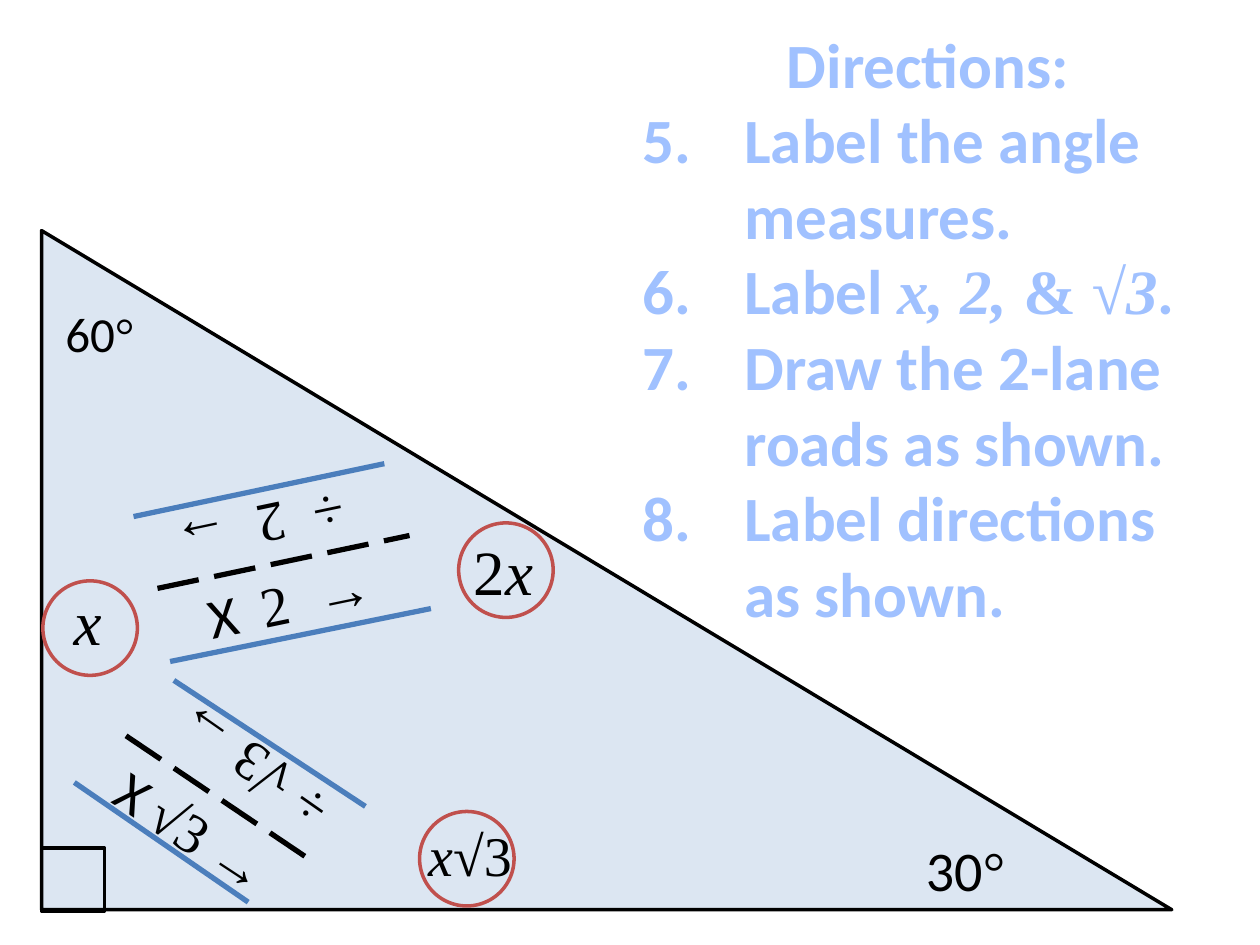
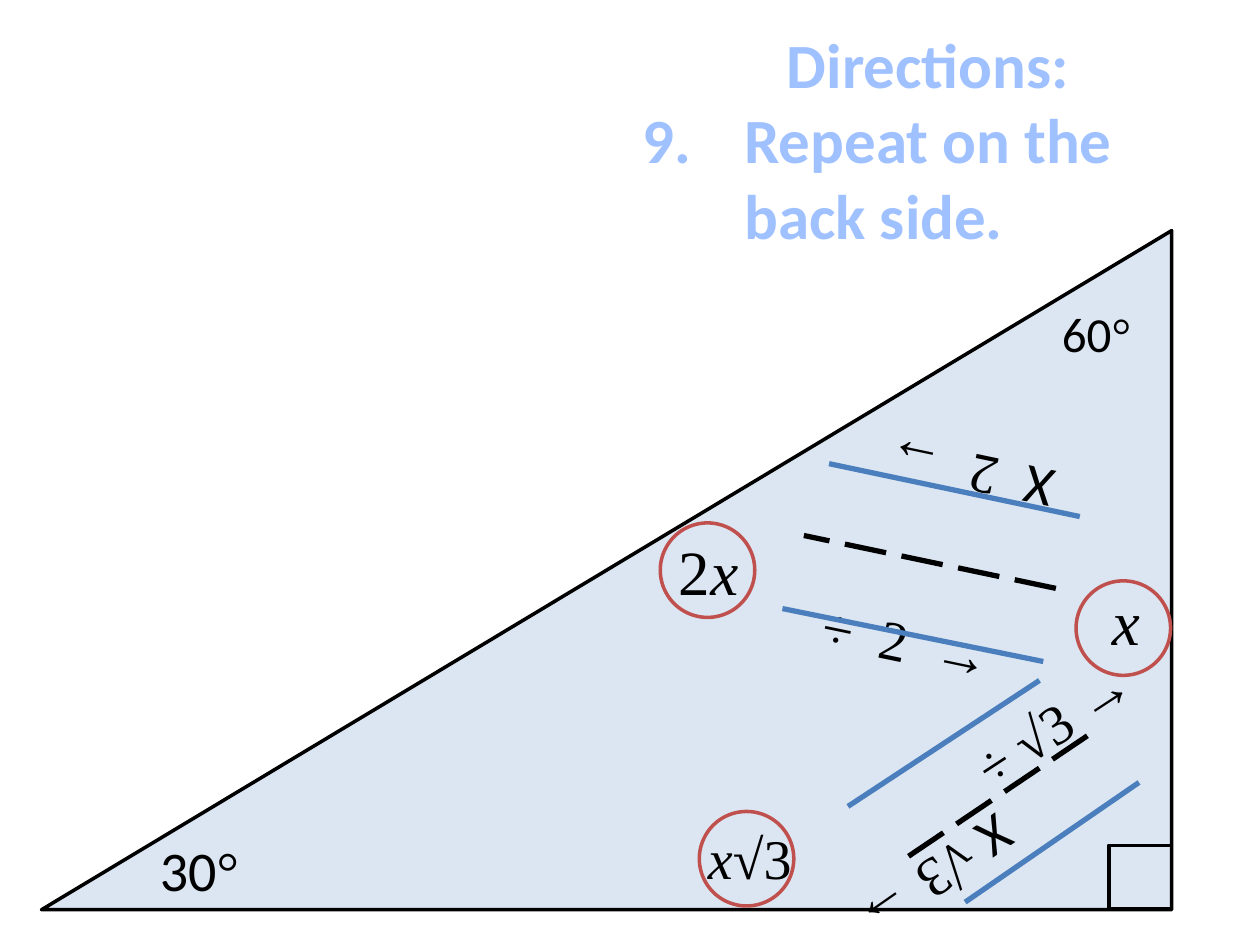
from dataclasses import dataclass

from lxml.etree import SubElement
from pptx import Presentation
from pptx.dml.color import RGBColor
from pptx.enum.dml import MSO_LINE_DASH_STYLE as Dash
from pptx.enum.shapes import MSO_CONNECTOR, MSO_SHAPE
from pptx.enum.text import PP_ALIGN as Align
from pptx.oxml.ns import qn
from pptx.util import Inches, Pt

COLUMNS, ROWS = 10, 7.5  # one grid cell is one inch square
SANS, SERIF = "Calibri", "Times New Roman"
BLACK, PALE_BLUE, ROAD_BLUE = "000000", "DCE6F2", "4B7EBC"
RED, DIRECTIONS_BLUE = "C0504D", "A0C1FF"
OUTLINE, ROAD_EDGE = 2, 3
CIRCLE, CORNER = 0.75, 0.5
LABEL_ROW = 0.64


@dataclass
class Frame:
    """The triangle's box; parts are placed from its top left corner."""
    slide: object
    mirrored: bool
    left: float = 0.33
    top: float = 1.83
    width: float = 8.97
    height: float = 5.39

    def flip(self, x, width=0):
        return self.width - x - width if self.mirrored else x

    def turn(self, angle):
        return (-angle if self.mirrored else angle) % 360

    def pick(self, plain, mirrored):
        return mirrored if self.mirrored else plain

    def at(self, x, y):
        return Inches(self.left + x), Inches(self.top + y)


def rgb(hex_color):
    return RGBColor.from_string(hex_color)


def write(paragraph, pieces, size, color=BLACK, bold=False):
    """Each piece is (text, font) or (text, font, italic)."""
    for words, font, *italic in pieces:
        run = paragraph.add_run()
        run.text = words
        run.font.name = font
        run.font.size = Pt(size)
        run.font.bold = bold
        run.font.italic = bool(italic and italic[0])
        run.font.color.rgb = rgb(color)


def add_label(frame, x, y, width, height, pieces, size, angle=0, align=Align.LEFT):
    label = frame.slide.shapes.add_textbox(
        *frame.at(x, y), Inches(width), Inches(height))
    label.rotation = frame.turn(angle)
    label.text_frame.word_wrap = True
    paragraph = label.text_frame.paragraphs[0]
    paragraph.alignment = align
    write(paragraph, pieces, size)


def add_outline(frame, kind, x, y, width, height, color, fill=None):
    outline = frame.slide.shapes.add_shape(
        kind, *frame.at(frame.flip(x, width), y), Inches(width), Inches(height))
    outline.shadow.inherit = False
    outline.line.color.rgb = rgb(color)
    outline.line.width = Pt(OUTLINE)
    if fill:
        outline.fill.solid()
        outline.fill.fore_color.rgb = rgb(fill)
    else:
        outline.fill.background()
    return outline


def add_road_line(frame, start, end, color, dash=None):
    (x1, y1), (x2, y2) = start, end
    line = frame.slide.shapes.add_connector(
        MSO_CONNECTOR.STRAIGHT,
        *frame.at(frame.flip(x1), y1), *frame.at(frame.flip(x2), y2))
    line.line.color.rgb = rgb(color)
    line.line.width = Pt(ROAD_EDGE)
    if dash:
        line.line.dash_style = dash
    SubElement(line._element.spPr, qn("a:effectLst"))


def add_triangle(frame):
    triangle = add_outline(frame, MSO_SHAPE.RIGHT_TRIANGLE, 0, 0,
                           frame.width, frame.height, BLACK, PALE_BLUE)
    if frame.mirrored:
        triangle._element.spPr.xfrm.set("flipH", "1")
    add_label(frame, frame.pick(0.09, 8), 0.53, 0.88, 0.57,
              [("60", SANS), ("°", SERIF)], 28)
    add_label(frame, frame.pick(6.92, 0.84), 4.75, 1.21, LABEL_ROW,
              [("30", SANS), ("°", SERIF)], 32)
    add_outline(frame, MSO_SHAPE.RECTANGLE, 0, frame.pick(4.9, 4.88),
                CORNER, CORNER, BLACK)


def add_road(frame, lanes, edges, align):
    """Two lanes of text, then the far edge, dashed middle and near edge.

    Each lane ends with the shift it takes when the triangle is mirrored.
    """
    for x, y, width, angle, pieces, mirrored_shift in lanes:
        right, down = frame.pick((0, 0), mirrored_shift)
        add_label(frame, frame.flip(x, width) + right, y + down, width,
                  LABEL_ROW, pieces, 32, angle, align)
    styles = (ROAD_BLUE, None), (BLACK, Dash.LONG_DASH), (ROAD_BLUE, None)
    for (start, end), (color, dash) in zip(edges, styles):
        add_road_line(frame, start, end, color, dash)


def add_roads(frame):
    times_two = frame.pick([("X  ", SANS), ("2  →", SERIF)],
                           [("X", SANS), ("  2  →", SERIF)])
    over_two = [("÷  2  →", SERIF)]
    times_root = frame.pick([("X ", SANS), ("√3 →", SERIF)],
                            [("X", SANS), (" √3 →", SERIF)])
    over_root = [("÷ √3 →", SERIF)]
    # Mirroring reverses the direction of travel, so the lanes swap.
    add_road(frame,
             [(1.15, 2.62, 1.64, -11.7, frame.pick(times_two, over_two),
               (-0.13, 0.32)),
              (0.71, 2.04, 2.05, 168.1, frame.pick(over_two, times_two),
               (0.13, -0.42))],
             [((0.73, 2.27), (2.72, 1.85)),
              ((0.92, 2.84), (2.92, 2.42)),
              ((1.02, 3.42), (3.09, 3))],
             Align.CENTER)
    add_road(frame,
             [(0.42, 4.48, 1.67, 33.3, frame.pick(times_root, over_root),
               (0.35, -0.91)),
              (0.71, 3.88, 1.76, 214.9, frame.pick(over_root, times_root),
               (-0.35, 1.01))],
             [((1.05, 3.57), (2.57, 4.57)),
              ((0.67, 4.01), (2.17, 5.02)),
              ((0.26, 4.38), (1.64, 5.33))],
             Align.LEFT)


def add_side_names(frame):
    x_piece = ("x", SERIF, True)
    add_label(frame, frame.flip(0.03, 0.67), 2.74, 0.67, 0.71,
              [x_piece], 36, align=Align.CENTER)
    add_label(frame, frame.pick(3.25, 4.88), 2.35, 0.83, 0.71,
              [("2", SERIF), x_piece], 36, align=Align.CENTER)
    add_label(frame, frame.pick(2.97, 5.19), frame.pick(4.63, 4.66), 0.92,
              LABEL_ROW, [x_piece, ("√3", SERIF)], 32)
    for x, y in (3.31, 2.32), (3, 4.61), (0.01, 2.78):
        add_outline(frame, MSO_SHAPE.OVAL, x, y, CIRCLE, CIRCLE, RED)


def number(paragraph, first):
    properties = paragraph._p.get_or_add_pPr()
    properties.set("marL", str(Inches(0.81)))
    properties.set("indent", str(-Inches(0.81)))
    SubElement(properties, qn("a:buFont"), typeface="+mj-lt")
    SubElement(properties, qn("a:buAutoNum"), type="arabicPeriod", startAt=str(first))


def add_directions(slide, height, first, steps):
    directions = slide.shapes.add_textbox(
        Inches(COLUMNS / 2), Inches(0.15), Inches(4.73), Inches(height)).text_frame
    directions.word_wrap = True
    heading = directions.paragraphs[0]
    heading.alignment = Align.CENTER
    write(heading, [("Directions:", SANS)], 36, DIRECTIONS_BLUE, True)
    for pieces in steps:
        step = directions.add_paragraph()
        number(step, first)
        write(step, pieces, 36, DIRECTIONS_BLUE, True)


def build_slide(deck, mirrored, *directions):
    slide = deck.slides.add_slide(deck.slide_layouts[6])
    add_directions(slide, *directions)
    frame = Frame(slide, mirrored)
    add_triangle(frame)
    add_roads(frame)
    add_side_names(frame)


def main():
    deck = Presentation()
    deck.slide_width, deck.slide_height = Inches(COLUMNS), Inches(ROWS)
    build_slide(deck, False, 4.95, 5, [
        [("Label the angle measures.", SANS)],
        [("Label ", SANS), ("x, 2, ", SERIF, True), ("& ", SERIF),
         ("√3", SERIF, True), (".", SANS)],
        [("Draw the 2-lane roads as shown.", SANS)],
        [("Label directions as shown.", SANS)],
    ])
    build_slide(deck, True, 1.92, 9, [[("Repeat on the back side.", SANS)]])
    deck.save("out.pptx")


if __name__ == "__main__":
    main()
